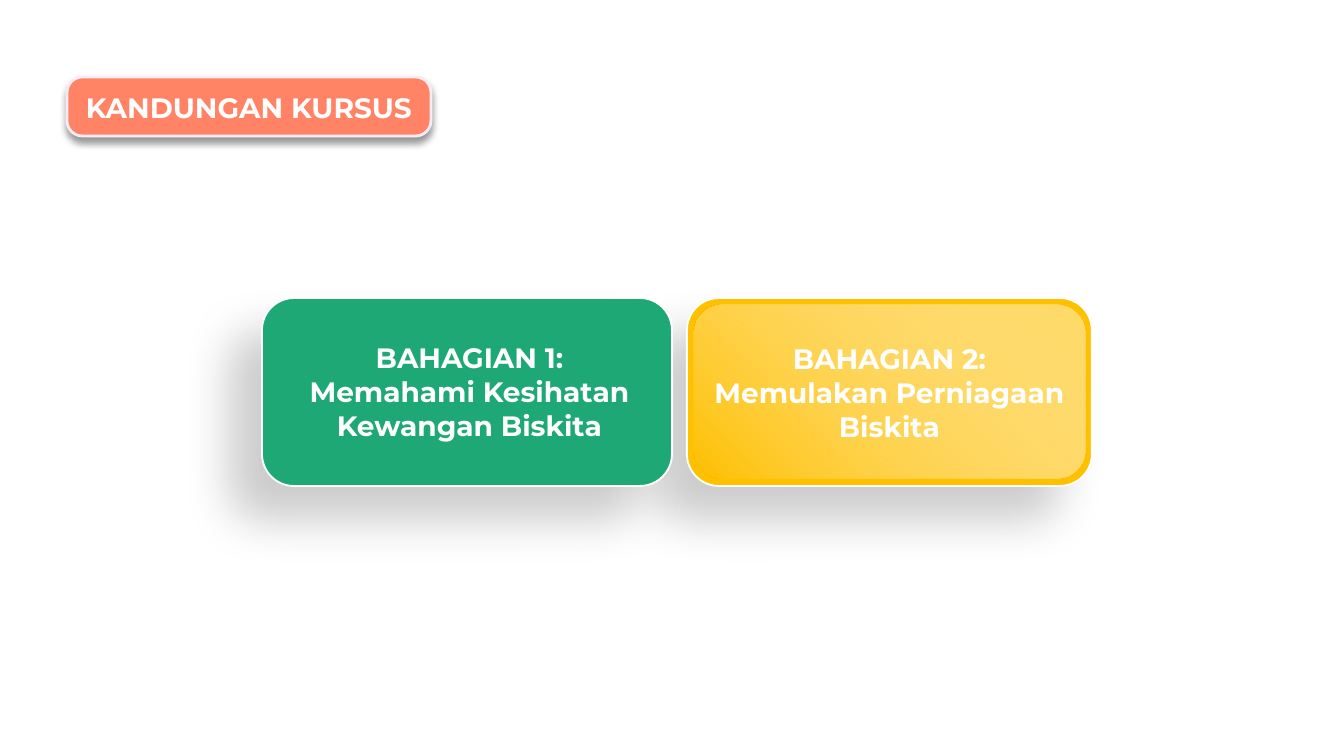
from lxml.etree import fromstring
from pptx import Presentation
from pptx.dml.color import RGBColor
from pptx.enum.shapes import MSO_SHAPE as SHAPE
from pptx.enum.text import MSO_ANCHOR as ANCHOR, PP_ALIGN as ALIGN
from pptx.util import Pt

PX = 914400 / 134.4
NS = 'xmlns:a="http://schemas.openxmlformats.org/drawingml/2006/main"'
WHITE = "FFFFFF"
FONT = {"name": "Montserrat", "size": Pt(15), "bold": True}
INSETS = {"margin_left": 9, "margin_right": 9, "margin_top": 5, "margin_bottom": 5}

# Shadows: opacity %, blur pt, distance pt, direction degrees
TITLE_SHADOW = (40, 4, 3, 90)
CARD_SHADOW = (20, 25, 25, 135)

# Content, back to front; boxes are left, top, width, height in px
PANELS = [
    {"box": (67, 77, 364, 59), "fill": "FF8364", "line": ("F9EBF5", 1.5),
     "radius": 0.26, "shadow": TITLE_SHADOW,
     "text_box": (67, 86, 364, 44), "lines": ["KANDUNGAN KURSUS"]},
    {"box": (687, 298, 405, 188), "fill": "FFC000", "line": (WHITE, 1),
     "radius": 0.17, "shadow": CARD_SHADOW, "glow_inset": 7,
     "text_box": (687, 337, 405, 112),
     "lines": ["BAHAGIAN 2:", "Memulakan Perniagaan Biskita"]},
    {"box": (262, 298, 410, 188), "fill": "1DA875", "line": (WHITE, 1),
     "radius": 0.17, "shadow": CARD_SHADOW,
     "text_box": (231, 336, 410, 146), "indent": 67,
     "lines": ["BAHAGIAN 1:", "Memahami Kesihatan Kewangan Biskita"]},
]


def px(n):
    return round(n * PX)


def color(hex_value):
    return RGBColor.from_string(hex_value)


def add_round_rect(shapes, box, radius):
    sp = shapes.add_shape(SHAPE.ROUNDED_RECTANGLE, *map(px, box))
    sp.adjustments[0] = radius
    sp.shadow.inherit = False
    return sp


def add_shadow(sp, opacity, blur, dist, angle):
    effects = sp._element.spPr.find("{*}effectLst")
    effects.append(fromstring(
        f'<a:outerShdw {NS} blurRad="{Pt(blur)}" dist="{Pt(dist)}" '
        f'dir="{angle * 60000}" algn="ctr" rotWithShape="0"><a:srgbClr val="000000">'
        f'<a:alpha val="{opacity * 1000}"/></a:srgbClr></a:outerShdw>'))


def add_glow(shapes, box, inset, radius, base):
    """Inner panel that fades from the base colour to translucent white."""
    x, y, w, h = box
    sp = add_round_rect(shapes, (x + inset, y + inset, w - 2 * inset, h - 2 * inset), radius)
    sp.line.fill.background()
    sp._element.spPr.find("{*}prstGeom").addnext(fromstring(
        f'<a:gradFill {NS} rotWithShape="1"><a:gsLst>'
        f'<a:gs pos="0"><a:srgbClr val="{base}"/></a:gs>'
        f'<a:gs pos="97000"><a:srgbClr val="{WHITE}"><a:alpha val="41000"/></a:srgbClr></a:gs>'
        f'<a:gs pos="100000"><a:srgbClr val="{WHITE}"><a:alpha val="41000"/></a:srgbClr></a:gs>'
        f'</a:gsLst><a:lin ang="{315 * 60000}" scaled="0"/></a:gradFill>'))


def add_text(shapes, box, lines, indent=0):
    tf = shapes.add_textbox(*map(px, box)).text_frame
    tf.word_wrap = True
    tf.vertical_anchor = ANCHOR.TOP
    for side, value in INSETS.items():
        setattr(tf, side, px(value))
    for i, line in enumerate(lines):
        p = tf.paragraphs[0] if i == 0 else tf.add_paragraph()
        p.alignment = ALIGN.CENTER
        if indent:
            p._p.get_or_add_pPr().set("marL", str(px(indent)))
        r = p.add_run()
        r.text = line
        for key, value in FONT.items():
            setattr(r.font, key, value)
        r.font.color.rgb = color(WHITE)


def add_panel(shapes, panel):
    sp = add_round_rect(shapes, panel["box"], panel["radius"])
    sp.fill.solid()
    sp.fill.fore_color.rgb = color(panel["fill"])
    line_color, line_width = panel["line"]
    sp.line.color.rgb = color(line_color)
    sp.line.width = Pt(line_width)
    add_shadow(sp, *panel["shadow"])
    if "glow_inset" in panel:
        add_glow(shapes, panel["box"], panel["glow_inset"], panel["radius"], panel["fill"])
    add_text(shapes, panel["text_box"], panel["lines"], panel.get("indent", 0))


def main():
    prs = Presentation()
    prs.slide_width, prs.slide_height = px(1344), px(756)
    s = prs.slides.add_slide(prs.slide_layouts[6])
    # Title badge and the two course parts, each a group
    for panel in PANELS:
        add_panel(s.shapes.add_group_shape().shapes, panel)
    prs.save("out.pptx")


if __name__ == "__main__":
    main()
